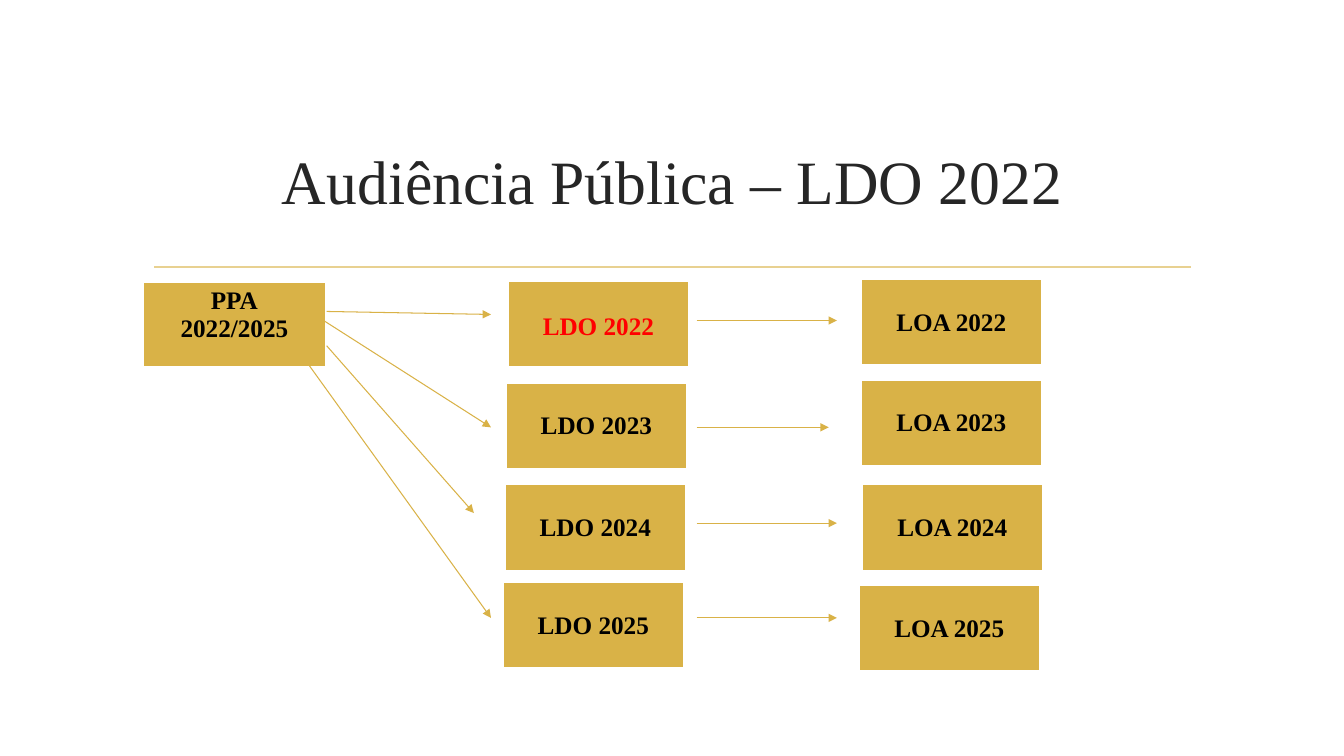
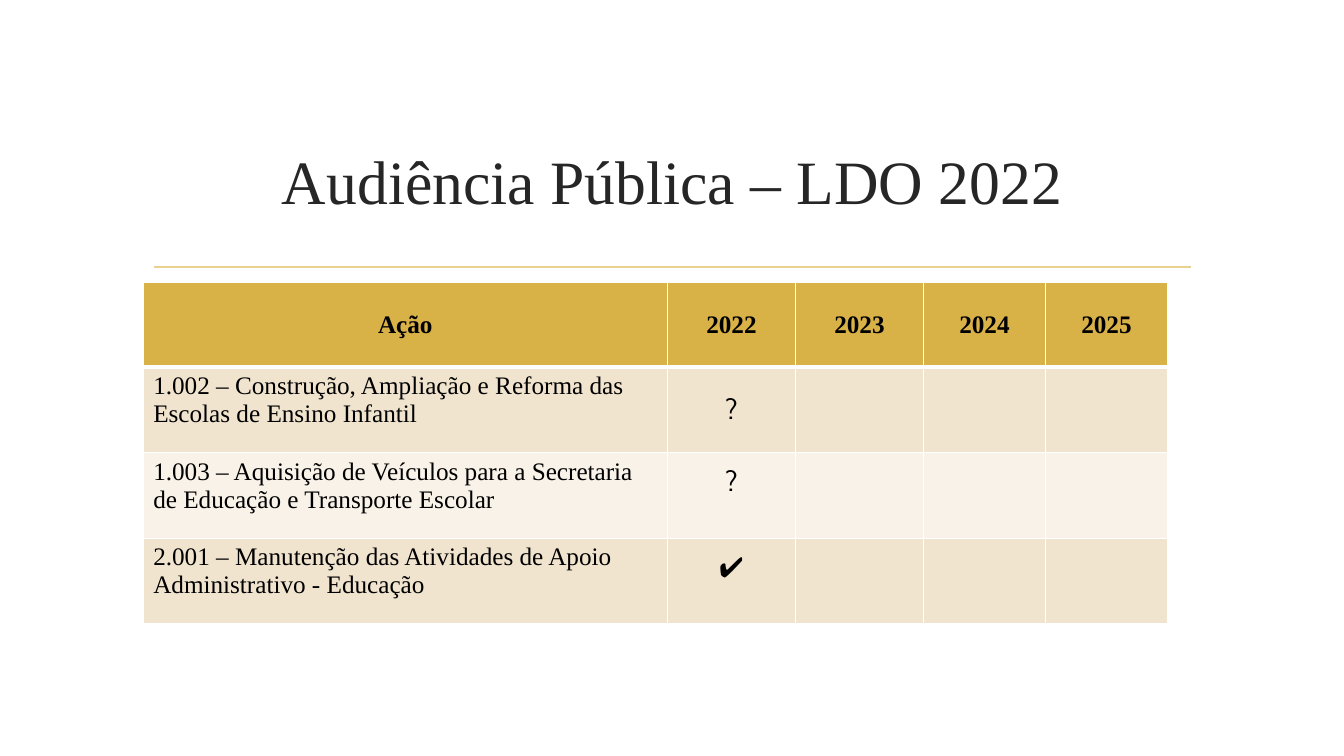
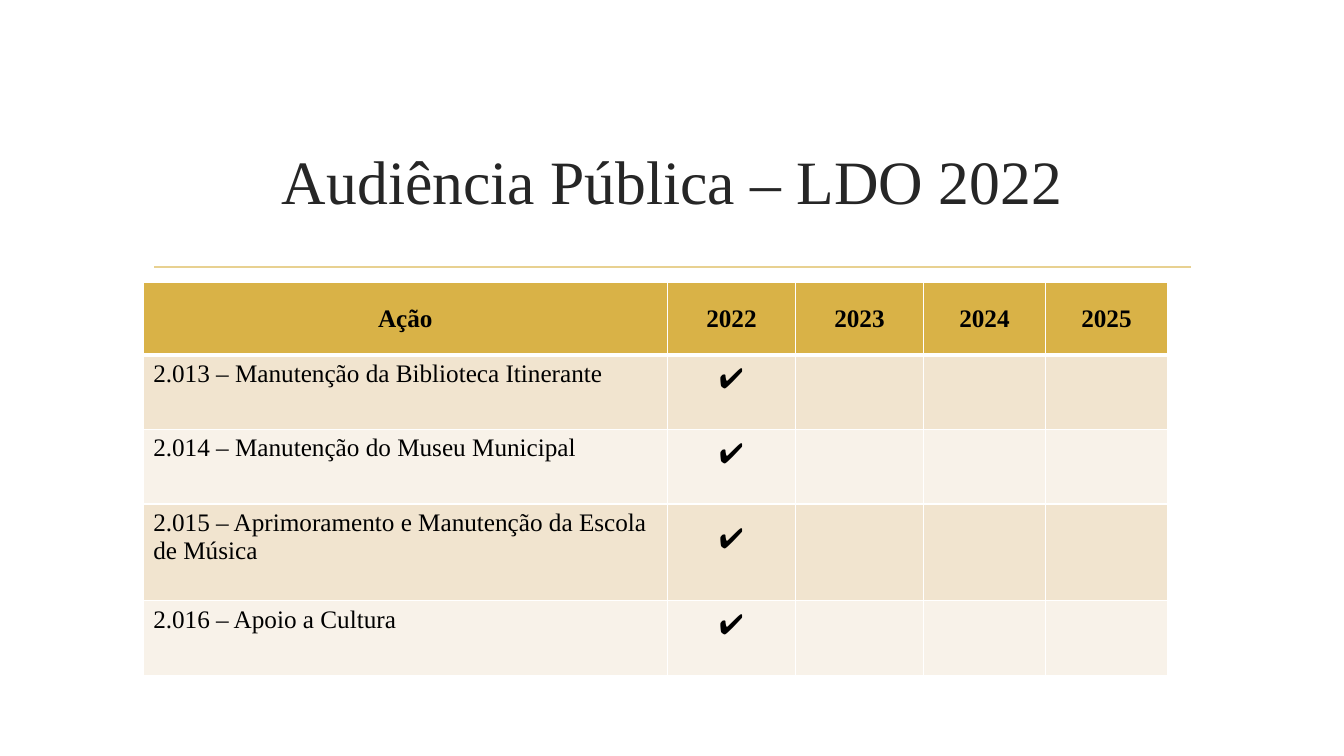
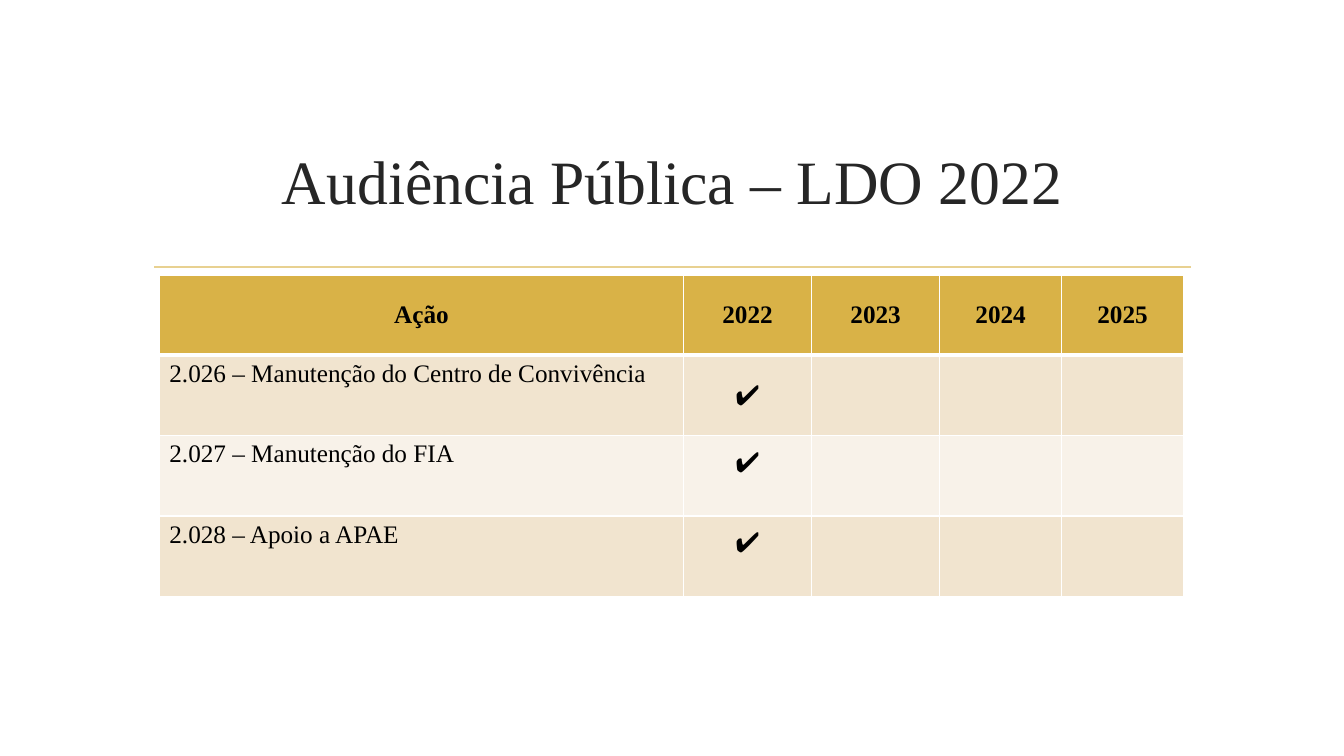
from lxml import etree
from pptx import Presentation
from pptx import util as u
from pptx.dml.color import RGBColor
from pptx.enum import shapes, text
from pptx.oxml.ns import qn

PX = 9144  # EMU per px, 100 px to the inch
COLORS = {
    "gold": "D9B247",
    "rule": "E8D191",
    "band_dark": "F1E4CF",
    "band_light": "F8F2E9",
    "title": "262626",
    "text": "000000",
    "alert": "FF0000",
    "white": "FFFFFF",
}
SERIF, SYMBOL = "Times New Roman", "Cabin"
CENTER, LEFT = text.PP_ALIGN.CENTER, text.PP_ALIGN.LEFT
MIDDLE, TOP = text.MSO_ANCHOR.MIDDLE, text.MSO_ANCHOR.TOP
TITLE = "Audiência Pública – LDO 2022"
COLUMNS = (520, 127, 127, 121, 121)
HEADINGS = ("Ação", "2022", "2023", "2024", "2025")
CHECK = "✔"


def rgb(name):
    return RGBColor.from_string(COLORS[name])


class Deck:
    def __init__(self):
        self.prs = Presentation()
        self.prs.slide_width, self.prs.slide_height = 1333 * PX, 750 * PX
        self.layout = self.prs.slide_layouts[5]
        self.s = None

    def slide(self, title):
        first = self.s is None
        self.s = self.prs.slides.add_slide(self.layout)
        if first:
            self.layout_rule()
        sp = self.s.shapes.title
        sp.left, sp.top, sp.width, sp.height = (v * PX for v in (142, 107, 1050, 143))
        tf = sp.text_frame
        tf.text = title
        tf.word_wrap = True
        tf.auto_size = text.MSO_AUTO_SIZE.NONE
        tf.vertical_anchor = MIDDLE
        self.style(tf, 44, "title")

    def layout_rule(self):
        """Move the line under the title to the layout, so every slide shows it."""
        rule = self.line((153, 265), (1181, 265), "rule", 1.25)
        self.layout.shapes._spTree.append(rule._element)

    def style(self, tf, size, color="text", bold=False, font=SERIF, align=CENTER):
        for p in tf.paragraphs:
            p.alignment = align
            p.font.size, p.font.name, p.font.bold = u.Pt(size), font, bold
            p.font.color.rgb = rgb(color)

    def line(self, start, end, color="gold", width=0.75, arrow=False):
        ends = (v * PX for v in (*start, *end))
        cx = self.s.shapes.add_connector(shapes.MSO_CONNECTOR.STRAIGHT, *ends)
        cx.line.color.rgb = rgb(color)
        cx.line.width = u.Pt(width)
        if arrow:
            etree.SubElement(cx.line._get_or_add_ln(), qn("a:tailEnd"), type="triangle")
        etree.SubElement(cx._element.spPr, qn("a:effectLst"))
        return cx

    def table(self, left, top, widths, heights):
        box = (left, top, sum(widths), sum(heights))
        frame = self.s.shapes.add_table(len(heights), len(widths), *(v * PX for v in box))
        tbl = frame.table
        tbl.first_row = tbl.horz_banding = False
        for col, width in zip(tbl.columns, widths):
            col.width = width * PX
        for row, height in zip(tbl.rows, heights):
            row.height = height * PX
        return tbl

    def cell(self, cell, words, fill, size=18, anchor=MIDDLE, **style):
        cell.text = words
        cell.vertical_anchor = anchor
        self.style(cell.text_frame, size, **style)
        self.borders(cell, fill == "gold")
        cell.fill.solid()
        cell.fill.fore_color.rgb = rgb(fill)

    def borders(self, cell, header):
        """White edges; a header has a top edge and a thick bottom edge."""
        edges = {"L": 1, "R": 1, "T": 1, "B": 3} if header else {"L": 1, "R": 1, "B": 1}
        tc_pr = cell._tc.get_or_add_tcPr()
        for side, width in edges.items():
            ln = etree.SubElement(tc_pr, qn(f"a:ln{side}"), w=str(u.Pt(width)))
            solid = etree.SubElement(ln, qn("a:solidFill"))
            etree.SubElement(solid, qn("a:srgbClr"), val=COLORS["white"])

    def box(self, left, top, words, width=179, height=86, **style):
        cell = self.table(left, top, [width], [height]).cell(0, 0)
        self.cell(cell, words, "gold", bold=True, **style)
        return cell

    def actions(self, left, top, heights, rows, first_centred=False):
        """Table of (action, mark for 2022); marks sit above the middle of their row."""
        tbl = self.table(left, top, COLUMNS, heights)
        for i, heading in enumerate(HEADINGS):
            self.cell(tbl.cell(0, i), heading, "gold", bold=True)
        for n, (action, mark) in enumerate(rows, 1):
            band = "band_dark" if n % 2 else "band_light"
            self.cell(tbl.cell(n, 0), action, band, anchor=TOP, align=LEFT)
            self.cell(tbl.cell(n, 1), mark, band, size=20, font=SYMBOL)
            if n > 1 or not first_centred:
                tbl.cell(n, 1).margin_bottom = 32 * PX
            for i in range(2, len(COLUMNS)):
                self.cell(tbl.cell(n, i), "", band)


def plan_slide(d):
    d.slide(TITLE)
    d.box(142, 280, "PPA\n2022/2025", width=181, height=85, anchor=TOP)
    ldo = [(504, 279), (502, 380), (501, 481), (499, 578)]
    loa = [(854, 277), (854, 377), (855, 481), (852, 581)]
    for year, (left, top) in enumerate(ldo, 2022):
        current = year == 2022
        cell = d.box(left, top, f"LDO {year}", color="alert" if current else "text",
                     anchor=TOP if current else MIDDLE)
        if current:
            cell.margin_top = 32 * PX
    for year, (left, top) in enumerate(loa, 2022):
        d.box(left, top, f"LOA {year}")
    plan_arrows = [((307, 363), (487, 613)), ((324, 343), (470, 509)),
                   ((321, 318), (487, 424)), ((324, 309), (487, 312))]
    budget_arrows = [((691, y), (x, y))
                     for x, y in ((830, 318), (822, 424), (830, 519), (830, 613))]
    for start, end in plan_arrows + budget_arrows:
        d.line(start, end, arrow=True)


def main():
    d = Deck()
    plan_slide(d)

    d.slide(TITLE)
    d.actions(142, 280, [84, 85, 85, 85], [
        ("1.002 – Construção, Ampliação e Reforma das Escolas de Ensino Infantil", "?"),
        ("1.003 – Aquisição de Veículos para a Secretaria de Educação e Transporte Escolar", "?"),
        ("2.001 – Manutenção das Atividades de Apoio Administrativo - Educação", CHECK),
    ], first_centred=True)

    d.slide(TITLE)
    d.actions(142, 280, [72, 74, 74, 96, 74], [
        ("2.013 – Manutenção da Biblioteca Itinerante", CHECK),
        ("2.014 – Manutenção do Museu Municipal", CHECK),
        ("2.015 – Aprimoramento e Manutenção da Escola de Música", CHECK),
        ("2.016 – Apoio a Cultura", CHECK),
    ])

    d.slide(TITLE)
    d.actions(158, 273, [79, 80, 80, 80], [
        ("2.026 – Manutenção do Centro de Convivência", CHECK),
        ("2.027 – Manutenção do FIA", CHECK),
        ("2.028 – Apoio a APAE", CHECK),
    ], first_centred=True)

    d.prs.save("out.pptx")


if __name__ == "__main__":
    main()
